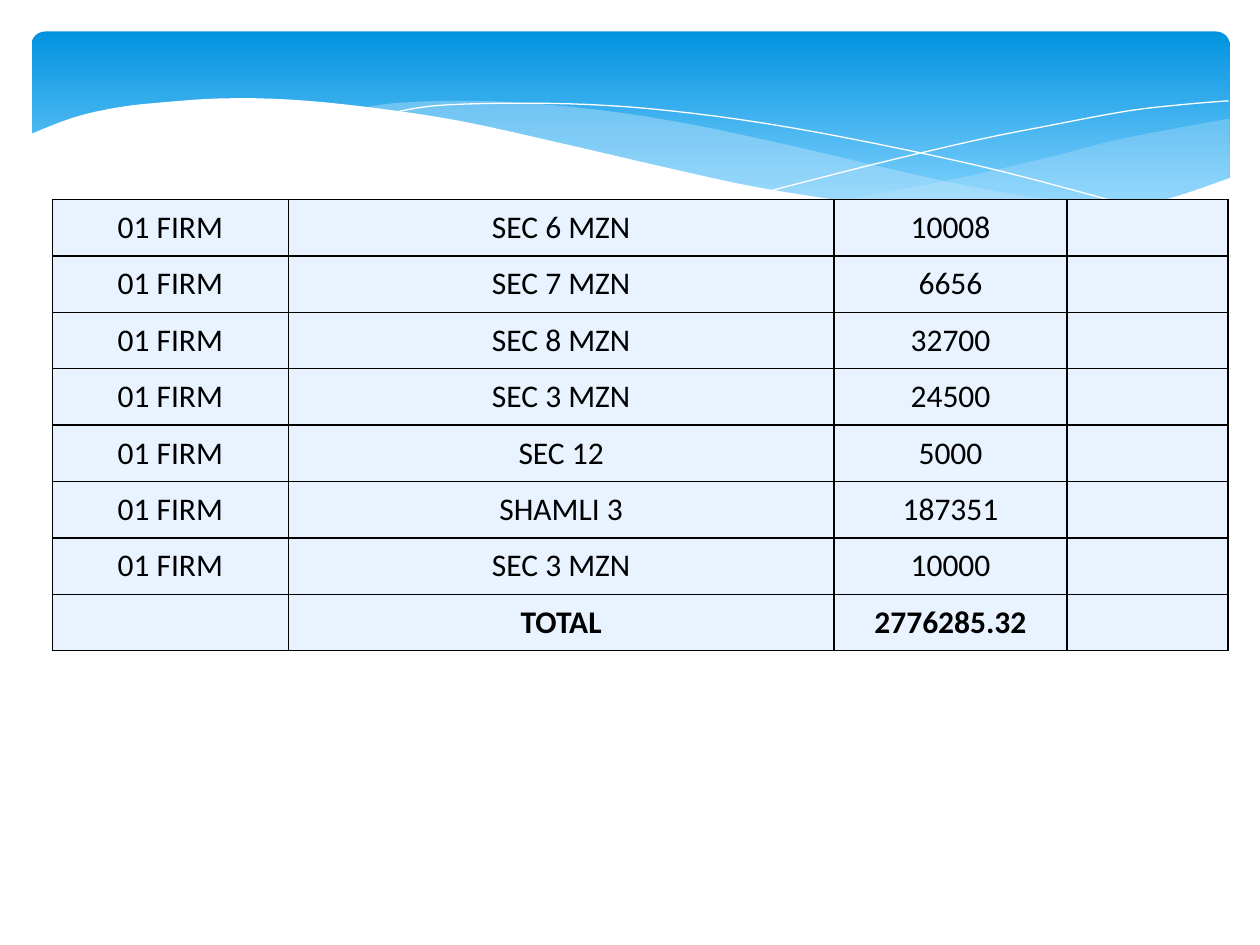
from pptx import Presentation
from pptx.dml.color import RGBColor
from pptx.enum.shapes import MSO_SHAPE as Preset
from pptx.enum.text import MSO_ANCHOR as Anchor, PP_ALIGN as Align
from pptx.oxml.ns import qn
from pptx.util import Pt
from lxml.etree import SubElement

BLACK = RGBColor(0x00, 0x00, 0x00)
WHITE = RGBColor(0xFF, 0xFF, 0xFF)
SKY_DARK = RGBColor(0x02, 0x93, 0xE0)
SKY_LIGHT = RGBColor(0x83, 0xD3, 0xFE)
WAVE_BLUE = RGBColor(0xC6, 0xE7, 0xFC)
CELL_BLUE = RGBColor(0xE8, 0xF3, 0xFF)

# Wave outlines: key points measured in points from the banner's top left corner
RIGHT_TOP = [(684.7, 49.7), (623.5, 61.2), (581, 72), (524.2, 85), (457.9, 97.2)]
RIGHT_BOTTOM = [(457.9, 97.2), (499.7, 102.2), (544.3, 105.8), (583.2, 105.8),
                (616.3, 102.2), (645.1, 97.2), (665.3, 91.4), (684.7, 83.5)]
MIDDLE_TOP = [(625, 102.2), (584.6, 96.5), (540, 89.3), (490.3, 78.5), (434.9, 65.5),
              (381.6, 54), (334.1, 46.1), (284.4, 41), (241.9, 39.6), (207.4, 41),
              (187.9, 43.9)]
MIDDLE_BOTTOM = [(187.9, 43.9), (228.2, 49.7), (272.9, 58.3), (335.5, 72.7), (389.5, 85),
                 (438.5, 94.3), (492.5, 101.5), (538.6, 105.8), (578.2, 106.6),
                 (625, 102.2)]
FALLING_LINE = [(204.5, 46.8), (229.7, 42.5), (270.7, 41), (319.7, 41.8), (365.8, 45.4),
                (419.8, 52.6), (482.4, 64.1), (554.4, 79.9), (635, 101.5)]
RISING_LINE = [(423.4, 90.7), (482.4, 75.6), (540.7, 61.9), (583.9, 53.3),
               (626.4, 45.4), (657.4, 41.8), (684, 39.6)]
WHITE_TOP = [(685.4, 83.5), (651.6, 95), (620.6, 101.5), (574.6, 105.1), (529.9, 104.4),
             (477.4, 98.6), (416.2, 89.3), (362.9, 77.8), (303.8, 64.1), (244.8, 51.1),
             (192.2, 43.2), (147.6, 38.9), (109.4, 38.2), (77, 40.3), (50.4, 43.2),
             (24.5, 49), (-1.4, 59)]
WHITE_BASE = [(-1.4, 143), (685.4, 143)]

COLUMN_WIDTHS = [134.8, 311.8, 133.2, 92]
ROWS = [
    ("01 FIRM", "SEC 6 MZN", "10008", ""),
    ("01 FIRM", "SEC 7 MZN", "6656", ""),
    ("01 FIRM", "SEC 8 MZN", "32700", ""),
    ("01 FIRM", "SEC 3 MZN", "24500", ""),
    ("01 FIRM", "SEC 12", "5000", ""),
    ("01 FIRM", "SHAMLI 3", "187351", ""),
    ("01 FIRM", "SEC 3 MZN", "10000", ""),
    ("", "TOTAL", "2776285.32", ""),
]


def smooth_curve(points, steps=4):
    """Catmull-Rom curve through the key points."""
    padded = [points[0], *points, points[-1]]
    curve = [points[0]]
    for a, b, c, d in zip(padded, padded[1:], padded[2:], padded[3:]):
        for step in range(1, steps + 1):
            t = step / steps
            curve.append(tuple(
                (2 * q + (r - p) * t + (2 * p - 5 * q + 4 * r - s) * t ** 2
                 + (3 * q - p - 3 * r + s) * t ** 3) / 2
                for p, q, r, s in zip(a, b, c, d)))
    return curve


def add_wave(slide, left, top, points, fill=None, opacity=100, line=None):
    vertices = [(Pt(left + x), Pt(top + y)) for x, y in points]
    builder = slide.shapes.build_freeform(*vertices[0])
    builder.add_line_segments(vertices[1:], close=fill is not None)
    shape = builder.convert_to_shape()
    shape.shadow.inherit = False
    if fill is None:
        shape.fill.background()
    else:
        shape.fill.solid()
        shape.fill.fore_color.rgb = fill
        if opacity < 100:
            color = shape.fill._xPr.find(f".//{qn('a:srgbClr')}")
            SubElement(color, qn("a:alpha"), val=str(opacity * 1000))
    if line is None:
        shape.line.fill.background()
    else:
        shape.line.color.rgb = line
        shape.line.width = Pt(0)


def add_banner(slide, left, top, width, height):
    # Gradient panel
    panel = slide.shapes.add_shape(Preset.ROUNDED_RECTANGLE,
                                   Pt(left), Pt(top), Pt(width), Pt(height))
    panel.adjustments[0] = 0.07
    panel.shadow.inherit = False
    panel.line.fill.background()
    panel.fill.gradient()
    panel.fill.gradient_angle = 270
    stops = [(0, SKY_DARK), (0.9, SKY_LIGHT)]
    for stop, (position, color) in zip(panel.fill.gradient_stops, stops):
        stop.position = position
        stop.color.rgb = color

    # Translucent waves, hairlines, and the white wave in front
    add_wave(slide, left, top, smooth_curve(RIGHT_TOP) + smooth_curve(RIGHT_BOTTOM),
             fill=WAVE_BLUE, opacity=29)
    add_wave(slide, left, top, smooth_curve(MIDDLE_TOP) + smooth_curve(MIDDLE_BOTTOM),
             fill=WAVE_BLUE, opacity=40)
    for points in (FALLING_LINE, RISING_LINE):
        add_wave(slide, left, top, smooth_curve(points), line=WHITE)
    add_wave(slide, left, top, smooth_curve(WHITE_TOP) + WHITE_BASE, fill=WHITE)


def write_text(cell, text, size=18, bold=False, color=BLACK, font="Calibri"):
    paragraph = cell.text_frame.paragraphs[0]
    paragraph.alignment = Align.CENTER
    target = paragraph
    if text:
        target = paragraph.add_run()
        target.text = text
    target.font.size = Pt(size)
    target.font.bold = bold
    target.font.name = font
    target.font.color.rgb = color


def add_borders(cell, color=BLACK, width=1):
    properties = cell._tc.get_or_add_tcPr()
    for index, side in enumerate(("lnL", "lnR", "lnT", "lnB")):
        border = SubElement(properties, qn(f"a:{side}"), w=str(Pt(width)))
        fill = SubElement(border, qn("a:solidFill"))
        SubElement(fill, qn("a:srgbClr"), val=str(color))
        properties.insert(index, border)


def add_firm_table(slide, left, top, width, height):
    frame = slide.shapes.add_table(len(ROWS), len(COLUMN_WIDTHS),
                                   Pt(left), Pt(top), Pt(width), Pt(height))
    table = frame.table
    table.first_row = table.horz_banding = False
    for column, column_width in zip(table.columns, COLUMN_WIDTHS):
        column.width = Pt(column_width)
    for row, texts in zip(table.rows, ROWS):
        row.height = Pt(height / len(ROWS))
        for cell, text in zip(row.cells, texts):
            cell.margin_left = cell.margin_right = 0
            cell.margin_top = cell.margin_bottom = 0
            cell.vertical_anchor = Anchor.MIDDLE
            cell.fill.solid()
            cell.fill.fore_color.rgb = CELL_BLUE
            add_borders(cell)
            write_text(cell, text, bold="TOTAL" in texts)


def main():
    presentation = Presentation()
    presentation.slide_width = Pt(720)
    presentation.slide_height = Pt(540)
    slide = presentation.slides.add_slide(presentation.slide_layouts[6])
    add_banner(slide, 18, 18, 684.7, 112.3)
    add_firm_table(slide, 30, 114, sum(COLUMN_WIDTHS), 258)
    presentation.save("out.pptx")


if __name__ == "__main__":
    main()
